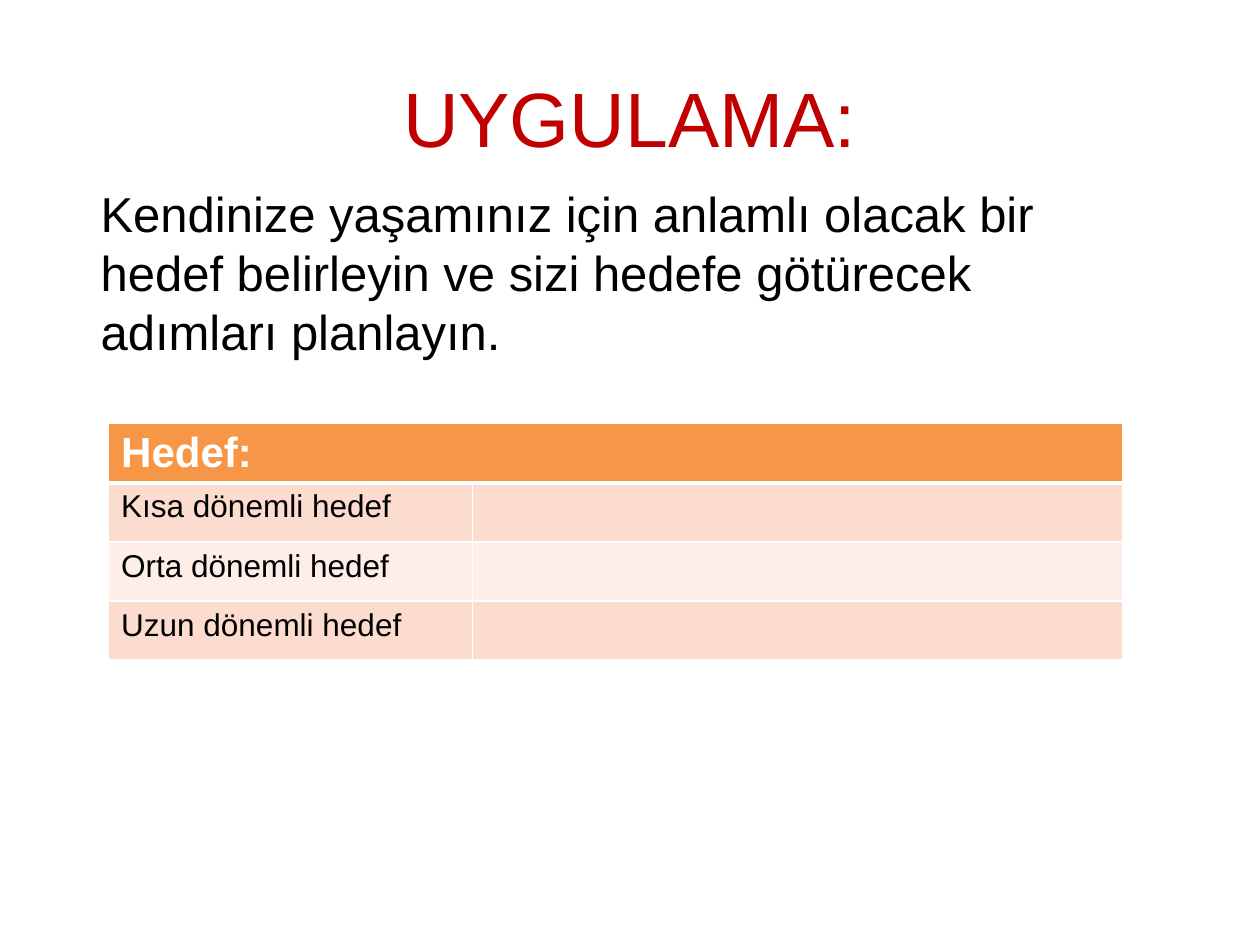
from lxml.etree import SubElement
from pptx import Presentation
from pptx.dml.color import RGBColor
from pptx.enum.text import MSO_ANCHOR, PP_ALIGN
from pptx.oxml.ns import qn
from pptx.util import Cm, Pt

TITLE = "UYGULAMA:"
TASK = ("Kendinize yaşamınız için anlamlı olacak bir hedef belirleyin "
        "ve sizi hedefe götürecek adımları planlayın.")
HEADER = "Hedef:"
GOALS = ["Kısa dönemli hedef", "Orta dönemli hedef", "Uzun dönemli hedef"]
COL_WIDTHS = [7.34, 13.1]
ROW_HEIGHT = 1.19
BANDS = ["FCDCCE", "FDEEE8"]
WHITE = "FFFFFF"


def rgb(value):
    return RGBColor.from_string(value)


def style(tf, size, color, bold=False, align=PP_ALIGN.LEFT):
    for p in tf.paragraphs:
        p.alignment = align
        for r in p.runs:
            r.font.name = "Arial"
            r.font.size = Pt(size)
            r.font.bold = bold
            r.font.color.rgb = rgb(color)


def place(sp, left, top, width, height):
    sp.left, sp.top = Cm(left), Cm(top)
    sp.width, sp.height = Cm(width), Cm(height)


def fill_cell(cell, color, bottom=1):
    tcPr = cell._tc.get_or_add_tcPr()
    for side, width in (("L", 1), ("R", 1), ("T", 1), ("B", bottom)):
        ln = SubElement(tcPr, qn(f"a:ln{side}"), w=str(Pt(width)))
        solid = SubElement(ln, qn("a:solidFill"))
        SubElement(solid, qn("a:srgbClr"), val=WHITE)
    cell.fill.solid()
    cell.fill.fore_color.rgb = rgb(color)


def add_goal_table(slide):
    rows = len(GOALS) + 1
    frame = slide.shapes.add_table(
        rows, len(COL_WIDTHS), Cm(2.19), Cm(8.54),
        Cm(sum(COL_WIDTHS)), Cm(rows * ROW_HEIGHT))
    table = frame.table
    for col, width in zip(table.columns, COL_WIDTHS):
        col.width = Cm(width)
    for row in table.rows:
        row.height = Cm(ROW_HEIGHT)
    head = table.cell(0, 0)
    head.merge(table.cell(0, len(COL_WIDTHS) - 1))
    head.text = HEADER
    style(head.text_frame, 24, WHITE, bold=True)
    for cell in table.rows[0].cells:
        fill_cell(cell, "F79646", bottom=3)
    for i, goal in enumerate(GOALS):
        cells = table.rows[i + 1].cells
        cells[0].text = goal
        style(cells[0].text_frame, 18, "000000")
        for cell in cells:
            fill_cell(cell, BANDS[i % 2])


def main():
    prs = Presentation()
    prs.slide_width, prs.slide_height = Cm(25.4), Cm(19.05)
    slide = prs.slides.add_slide(prs.slide_layouts[5])
    add_goal_table(slide)

    title = slide.shapes.title
    place(title, 1.27, 0.76, 22.86, 3.18)
    title.text_frame.text = TITLE
    title.text_frame.vertical_anchor = MSO_ANCHOR.MIDDLE
    style(title.text_frame, 44, "C00000", align=PP_ALIGN.CENTER)

    task = slide.shapes.add_textbox(Cm(1.78), Cm(3.58), Cm(21.03), Cm(3.84))
    task.text_frame.word_wrap = True
    task.text_frame.text = TASK
    style(task.text_frame, 28, "000000")

    prs.save("out.pptx")


if __name__ == "__main__":
    main()
